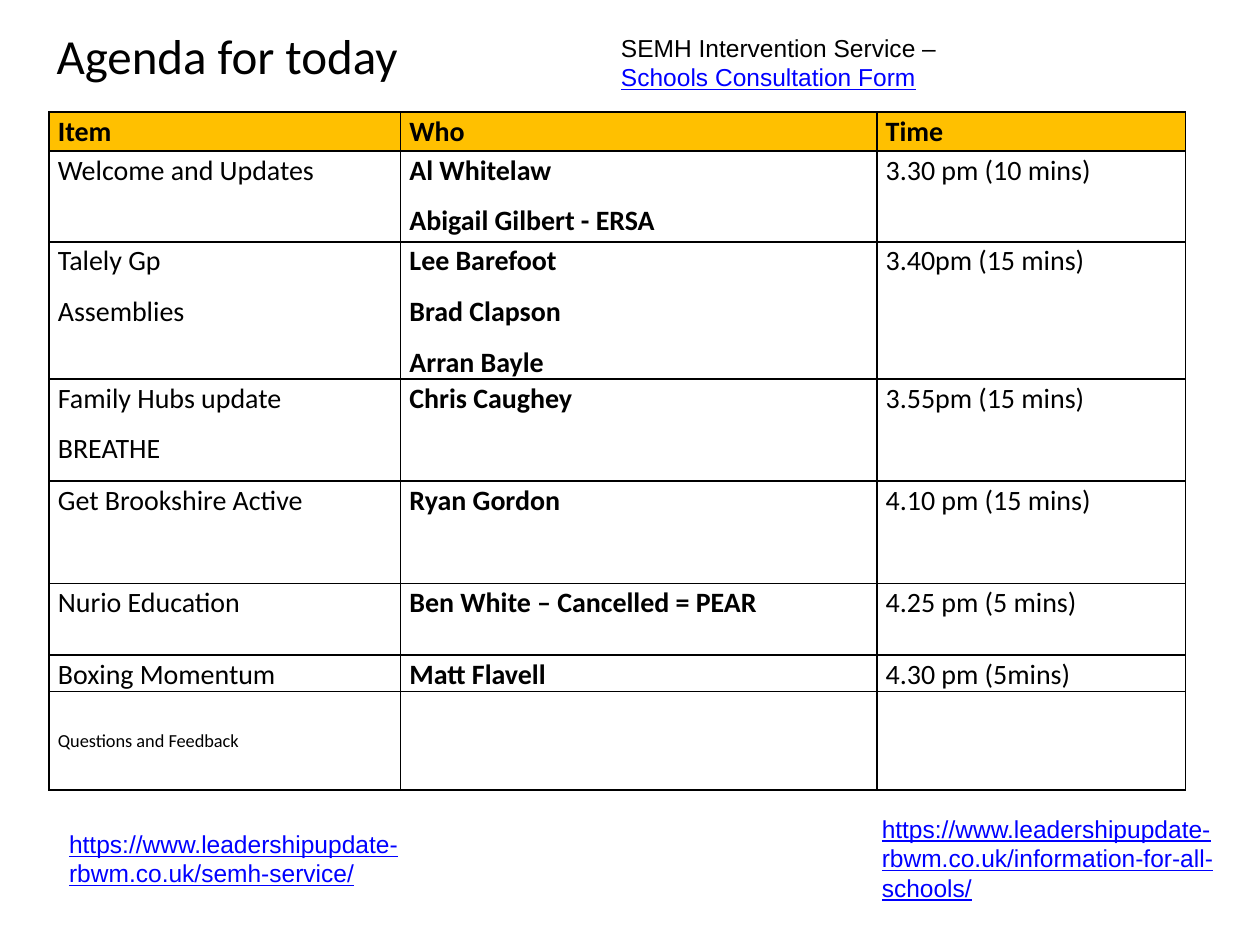
from dataclasses import dataclass

from lxml.etree import SubElement
from pptx import Presentation
from pptx.dml.color import RGBColor
from pptx.enum.text import MSO_ANCHOR as Anchor
from pptx.oxml.ns import qn
from pptx.util import Inches, Pt

BLACK = RGBColor(0x00, 0x00, 0x00)
LINK_BLUE = RGBColor(0x00, 0x00, 0xFF)
HEADER_GOLD = RGBColor(0xFF, 0xC0, 0x00)

COLUMN_WIDTHS = (2.79, 3.78, 2.45)
ROW_HEIGHTS = (0.31, 0.72, 1.09, 0.81, 0.81, 0.57, 0.29, 0.78)
WHO_COLUMN = 1


@dataclass(frozen=True)
class AgendaRow:
    item: str
    who: str
    time: str


@dataclass(frozen=True)
class Line:
    text: str
    size: float = 14
    font: str = "Arial"
    link: bool = False


@dataclass(frozen=True)
class Note:
    left: float
    top: float
    width: float
    height: float
    lines: tuple[Line, ...]
    anchor: Anchor = Anchor.TOP


AGENDA = (
    AgendaRow("Item", "Who", "Time"),
    AgendaRow("Welcome and Updates", "Al Whitelaw\nAbigail Gilbert - ERSA", "3.30 pm (10 mins)"),
    AgendaRow("Talely Gp\nAssemblies", "Lee Barefoot\nBrad Clapson\nArran Bayle", "3.40pm (15 mins)"),
    AgendaRow("Family Hubs update\nBREATHE", "Chris Caughey", "3.55pm (15 mins)"),
    AgendaRow("Get Brookshire Active", "Ryan Gordon", "4.10 pm (15 mins)"),
    AgendaRow("Nurio Education", "Ben White – Cancelled = PEAR", "4.25 pm (5 mins)"),
    AgendaRow("Boxing Momentum", "Matt Flavell", "4.30 pm (5mins)"),
    AgendaRow("Questions and Feedback", "", ""),
)

NOTES = (
    Note(0.35, -0.15, 6.91, 1.17, (Line("Agenda for today", 28, "Calibri"),), Anchor.MIDDLE),
    Note(0.45, 6.53, 3.1, 0.57,
         (Line("https://www.leadershipupdate-rbwm.co.uk/semh-service/", link=True),)),
    Note(6.9, 6.41, 3.1, 0.81,
         (Line("https://www.leadershipupdate-rbwm.co.uk/information-for-all-schools/", link=True),)),
    Note(4.83, 0.21, 4.05, 0.57,
         (Line("SEMH Intervention Service –"), Line("Schools Consultation Form", link=True))),
)


def add_note(slide, note: Note) -> None:
    box = slide.shapes.add_textbox(
        Inches(note.left), Inches(note.top), Inches(note.width), Inches(note.height))
    frame = box.text_frame
    frame.word_wrap = True
    frame.vertical_anchor = note.anchor
    frame.text = "\n".join(line.text for line in note.lines)
    for paragraph, line in zip(frame.paragraphs, note.lines):
        font = paragraph.runs[0].font
        font.name, font.size = line.font, Pt(line.size)
        font.color.rgb = LINK_BLUE if line.link else BLACK
        font.underline = line.link


def add_borders(cell) -> None:
    properties = cell._tc.get_or_add_tcPr()
    for side in ("a:lnL", "a:lnR", "a:lnT", "a:lnB"):
        border = SubElement(properties, qn(side), w=str(Pt(1)))
        fill = SubElement(border, qn("a:solidFill"))
        SubElement(fill, qn("a:srgbClr"), val=str(BLACK))


def fill_cell(cell, text: str, size: float, bold: bool, header: bool) -> None:
    add_borders(cell)
    if header:
        cell.fill.solid()
        cell.fill.fore_color.rgb = HEADER_GOLD
    else:
        cell.fill.background()
    cell.margin_left = cell.margin_right = Inches(0.07)
    cell.margin_top = cell.margin_bottom = 0
    cell.text_frame.text = text
    paragraphs = cell.text_frame.paragraphs
    for paragraph in paragraphs:
        paragraph.line_spacing = 1.07
        paragraph.space_after = Pt(8)
        font = paragraph.font
        for target in (font, *(run.font for run in paragraph.runs)):
            target.name, target.size, target.bold = "Calibri", Pt(size), bold
            target.color.rgb = BLACK
    paragraphs[-1].space_after = Pt(0)


def add_agenda(slide) -> None:
    table = slide.shapes.add_table(
        len(AGENDA), len(COLUMN_WIDTHS), Inches(0.39), Inches(0.89),
        Inches(sum(COLUMN_WIDTHS)), Inches(sum(ROW_HEIGHTS))).table
    table.horz_banding = False
    for column, width in zip(table.columns, COLUMN_WIDTHS):
        column.width = Inches(width)
    last = len(AGENDA) - 1
    for index, (entry, height) in enumerate(zip(AGENDA, ROW_HEIGHTS)):
        table.rows[index].height = Inches(height)
        header = index == 0
        size = 10.5 if index == last else 16
        for column, text in enumerate((entry.item, entry.who, entry.time)):
            fill_cell(table.cell(index, column), text, size,
                      header or column == WHO_COLUMN, header)
    table.cell(last, 0).vertical_anchor = Anchor.MIDDLE


def main() -> None:
    presentation = Presentation()
    presentation.slide_width, presentation.slide_height = Inches(10), Inches(7.5)
    slide = presentation.slides.add_slide(presentation.slide_layouts[6])
    title, *links = NOTES
    add_note(slide, title)
    add_agenda(slide)
    for note in links:
        add_note(slide, note)
    presentation.save("out.pptx")


if __name__ == "__main__":
    main()
